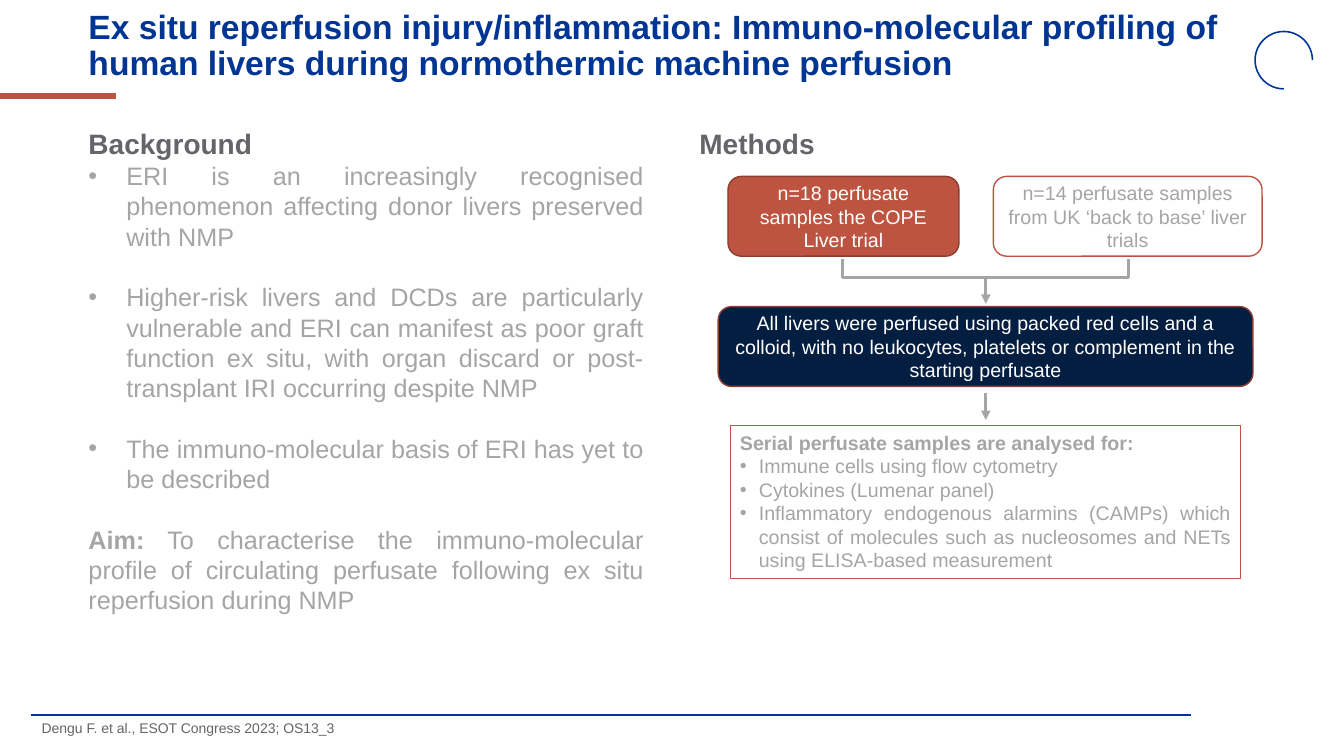
from dataclasses import dataclass

from lxml import etree
from pptx import Presentation
from pptx.dml.color import RGBColor
from pptx.enum.shapes import MSO_CONNECTOR, MSO_SHAPE
from pptx.enum.text import MSO_ANCHOR, MSO_AUTO_SIZE, PP_ALIGN
from pptx.oxml.ns import qn
from pptx.util import Pt

LEFT, CENTER, JUSTIFY = PP_ALIGN.LEFT, PP_ALIGN.CENTER, PP_ALIGN.JUSTIFY
TOP, MIDDLE = MSO_ANCHOR.TOP, MSO_ANCHOR.MIDDLE
RECT, ROUND, ARC = MSO_SHAPE.RECTANGLE, MSO_SHAPE.ROUNDED_RECTANGLE, MSO_SHAPE.ARC


@dataclass(frozen=True)
class Theme:
    font: str = "Arial"
    blue: str = "003594"
    navy: str = "041E42"
    red: str = "BC5441"
    dark_red: str = "8B3E30"
    dark: str = "636569"
    grey: str = "A5A5A5"
    white: str = "FFFFFF"
    title: int = 24
    heading: int = 20
    body: int = 18
    box: int = 14
    source: int = 10


T = Theme()


def rgb(value):
    return RGBColor.from_string(value)


def place(sp, x, y, w, h):
    sp.left, sp.top, sp.width, sp.height = Pt(x), Pt(y), Pt(w), Pt(h)


def set_frame(sp, anchor=TOP):
    tf = sp.text_frame
    tf.word_wrap = True
    tf.auto_size = MSO_AUTO_SIZE.NONE
    tf.vertical_anchor = anchor
    return tf


def add_text(tf, text, size, color, bold=False, lead="", align=LEFT,
             indent=0, before=0, spacing=1.0):
    """Add one paragraph; lead is a bold opening, indent gives a bullet."""
    p = tf.paragraphs[0]
    if p.runs:
        p = tf.add_paragraph()
    p.alignment, p.line_spacing = align, spacing
    p.space_before, p.space_after = Pt(before), Pt(0)
    pPr = p._p.get_or_add_pPr()
    pPr.set("marL", str(Pt(indent)))
    pPr.set("indent", str(-Pt(indent)))
    if indent:
        etree.SubElement(pPr, qn("a:buFont")).set("typeface", T.font)
        etree.SubElement(pPr, qn("a:buChar")).set("char", "•")
    else:
        etree.SubElement(pPr, qn("a:buNone"))
    for words, heavy in ((lead, True), (text, bold)):
        if words:
            r = p.add_run()
            r.text = words
            r.font.name, r.font.size, r.font.bold = T.font, Pt(size), heavy
            r.font.color.rgb = rgb(color)


def add_line(slide, x1, y1, x2, y2, color, width, arrow=False):
    line = slide.shapes.add_connector(MSO_CONNECTOR.STRAIGHT, Pt(x1), Pt(y1), Pt(x2), Pt(y2))
    line.line.color.rgb, line.line.width = rgb(color), Pt(width)
    if arrow:
        etree.SubElement(line.line._get_or_add_ln(), qn("a:tailEnd")).set("type", "triangle")
    etree.SubElement(line._element.spPr, qn("a:effectLst"))


def add_box(slide, kind, x, y, w, h, fill=None, line=T.red, width=1.0):
    sp = slide.shapes.add_shape(kind, Pt(x), Pt(y), Pt(w), Pt(h))
    sp.shadow.inherit = False
    if fill:
        sp.fill.solid()
        sp.fill.fore_color.rgb = rgb(fill)
    else:
        sp.fill.background()
    sp.line.color.rgb, sp.line.width = rgb(line), Pt(width)
    return sp


def add_decoration(slide, w, h):
    add_line(slide, 0, 68.5, 83, 68.5, T.red, 4.5)
    add_line(slide, 22, h - 29, w - 109, h - 29, T.blue, 1.5)
    ring = add_box(slide, ARC, w - 63.5, 22.5, 41, 41, line=T.blue, width=1.13)
    ring.adjustments[0], ring.adjustments[1] = 54, 0  # three quarters, from the bottom


def add_title(sp, x, y, w, h):
    place(sp, x, y, w, h)
    add_text(set_frame(sp, MIDDLE),
             "Ex situ reperfusion injury/inflammation: Immuno-molecular profiling of "
             "human livers during normothermic machine perfusion",
             T.title, T.blue, bold=True, spacing=0.9)


def add_background(sp, x, y, w, h):
    place(sp, x, y, w, h)
    tf = set_frame(sp)
    add_text(tf, "Background", T.heading, T.dark, bold=True)
    points = (
        "ERI is an increasingly recognised phenomenon affecting donor livers preserved with NMP",
        "Higher-risk livers and DCDs are particularly vulnerable and ERI can manifest as poor "
        "graft function ex situ, with organ discard or post-transplant IRI occurring despite NMP",
        "The immuno-molecular basis of ERI has yet to be described",
    )
    gap = 21.7
    for i, point in enumerate(points):
        add_text(tf, point, T.body, T.grey, align=JUSTIFY, indent=27, before=gap if i else 0)
    add_text(tf, " To characterise the immuno-molecular profile of circulating perfusate "
             "following ex situ reperfusion during NMP",
             T.body, T.grey, lead="Aim:", align=JUSTIFY, before=gap)


def add_methods(slide, x, y, w):
    heading = slide.shapes.add_textbox(Pt(x), Pt(y), Pt(w), Pt(32))
    add_text(set_frame(heading), "Methods", T.heading, T.dark, bold=True)

    # Sample sources and perfusion step
    row1, row2, box_h = y + 39, y + 132, 57
    steps = (
        (x + 27.5, row1, 165, T.red, T.dark_red, T.white,
         "n=18 perfusate samples the COPE Liver trial"),
        (x + 217, row1, 192, T.white, T.red, T.grey,
         "n=14 perfusate samples from UK ‘back to base’ liver trials"),
        (x + 20.5, row2, 382, T.navy, T.dark_red, T.white,
         "All livers were perfused using packed red cells and a colloid, with no "
         "leukocytes, platelets or complement in the starting perfusate"),
    )
    for left, top, width, fill, line, color, text in steps:
        sp = add_box(slide, ROUND, left, top, width, box_h, fill, line)
        add_text(set_frame(sp, MIDDLE), text, T.box, color, align=CENTER)

    # Bracket joining the two sources, then the arrows
    mid, half = x + 211.7, 102.2
    top, base = row1 + box_h + 2, row1 + box_h + 15
    builder = slide.shapes.build_freeform(mid - half, top, scale=12700.0)
    builder.add_line_segments(
        [(mid - half, base), (mid + half, base), (mid + half, top)], close=False)
    bracket = builder.convert_to_shape()
    bracket.shadow.inherit = False
    bracket.fill.background()
    bracket.line.color.rgb, bracket.line.width = rgb(T.grey), Pt(2.25)
    for start in (base, row2 + box_h + 5):
        add_line(slide, mid, start, mid, start + 19, T.grey, 2.25, arrow=True)

    # Analyses
    sp = add_box(slide, RECT, x + 29, y + 217, 365, 109, width=0.75)
    tf = set_frame(sp)
    add_text(tf, "Serial perfusate samples are analysed for:", T.box, T.grey,
             bold=True, align=JUSTIFY)
    for item in (
        "Immune cells using flow cytometry",
        "Cytokines (Lumenar panel)",
        "Inflammatory endogenous alarmins (CAMPs) which consist of molecules such as "
        "nucleosomes and NETs using ELISA-based measurement",
    ):
        add_text(tf, item, T.box, T.grey, align=JUSTIFY, indent=13.5)


def add_source(sp, x, y, w, h):
    place(sp, x, y, w, h)
    add_text(set_frame(sp), "Dengu F. et al., ESOT Congress 2023; OS13_3",
             T.source, T.dark, spacing=0.9)


def main():
    prs = Presentation()
    w, h = 960, 540
    prs.slide_width, prs.slide_height = Pt(w), Pt(h)
    slide = prs.slides.add_slide(prs.slide_layouts[3])
    title, background, source = slide.placeholders

    add_decoration(slide, w, h)
    add_title(title, 56, 7, 828, 53)
    add_background(background, 56, 87, 411, 359)
    add_methods(slide, 492.5, 87, 411)
    add_source(source, 22.5, 512, 564, 24)
    prs.save("out.pptx")


if __name__ == "__main__":
    main()
